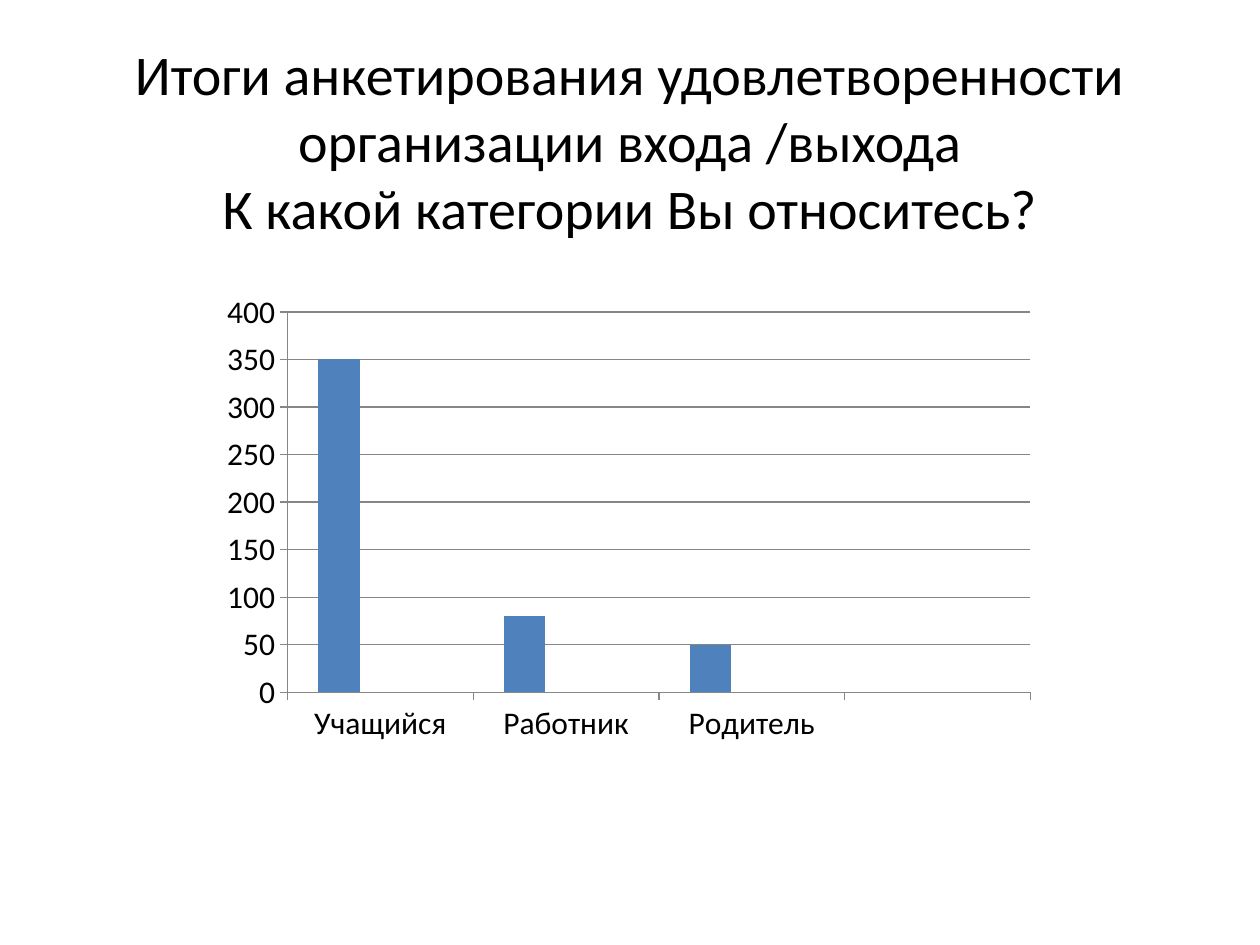
import pptx
import pptx.chart.data
import pptx.dml.color
import pptx.enum.chart
import pptx.enum.text
import pptx.util
from pptx.util import Inches

FACE = "Calibri"
TITLE = ("Итоги анкетирования удовлетворенности организации входа /выхода\v"
         "К какой категории Вы относитесь?")
CATS = ["Учащийся", "Работник", "Родитель", ""]
ROWS = [
    ("Series 1", [350, 80, 50, None], "4F81BD"),
    ("Series 2", [None] * 4, "C0504D"),
    ("Series 3", [None] * 4, "9BBB59"),
]


def paint(color, code):
    """Set a colour format from a hex string."""
    color.rgb = pptx.dml.color.RGBColor.from_string(code)


def style(font, size):
    """Set face, size and black colour on a font."""
    font.name = FACE
    font.size = pptx.util.Pt(size)
    paint(font.color, "000000")


def rule(line):
    """Draw a line of the chart in thin grey."""
    line.width = pptx.util.Pt(0.75)
    paint(line.color, "868686")


def add_title(slide):
    """Place and fill the title."""
    title = slide.shapes.title
    title.left, title.top = Inches(0.75), Inches(0.44)
    title.width, title.height = Inches(8.5), Inches(1.34)
    frame = title.text_frame
    frame.text = TITLE
    frame.word_wrap = True
    frame.auto_size = pptx.enum.text.MSO_AUTO_SIZE.NONE
    frame.vertical_anchor = pptx.enum.text.MSO_ANCHOR.MIDDLE
    para = frame.paragraphs[0]
    para.alignment = pptx.enum.text.PP_ALIGN.CENTER
    style(para.font, 32)


def add_bars(slide):
    """Add the column chart of respondents by category."""
    data = pptx.chart.data.CategoryChartData()
    data.categories = CATS
    for name, vals, _ in ROWS:
        data.add_series(name, vals)
    kind = pptx.enum.chart.XL_CHART_TYPE.COLUMN_CLUSTERED
    chart = slide.shapes.add_chart(
        kind, Inches(1.67), Inches(2.25), Inches(6.64), Inches(3.72), data).chart
    style(chart.font, 18)
    chart.has_title = False
    chart.has_legend = False
    plot = chart.plots[0]
    plot.gap_width = 150
    plot.overlap = 0
    plot.vary_by_categories = False
    for bars, (_, _, code) in zip(plot.series, ROWS):
        bars.format.fill.solid()
        paint(bars.format.fill.fore_color, code)
    for axis in (chart.category_axis, chart.value_axis):
        axis.major_tick_mark = pptx.enum.chart.XL_TICK_MARK.OUTSIDE
        axis.minor_tick_mark = pptx.enum.chart.XL_TICK_MARK.NONE
        rule(axis.format.line)
    scale = chart.value_axis
    scale.minimum_scale, scale.maximum_scale, scale.major_unit = 0, 400, 50
    scale.has_major_gridlines = True
    rule(scale.major_gridlines.format.line)


def main():
    """Build and save the slide."""
    deck = pptx.Presentation()
    deck.slide_width, deck.slide_height = Inches(10), Inches(7.5)
    slide = deck.slides.add_slide(deck.slide_layouts[5])
    add_title(slide)
    add_bars(slide)
    deck.save("out.pptx")


if __name__ == "__main__":
    main()
